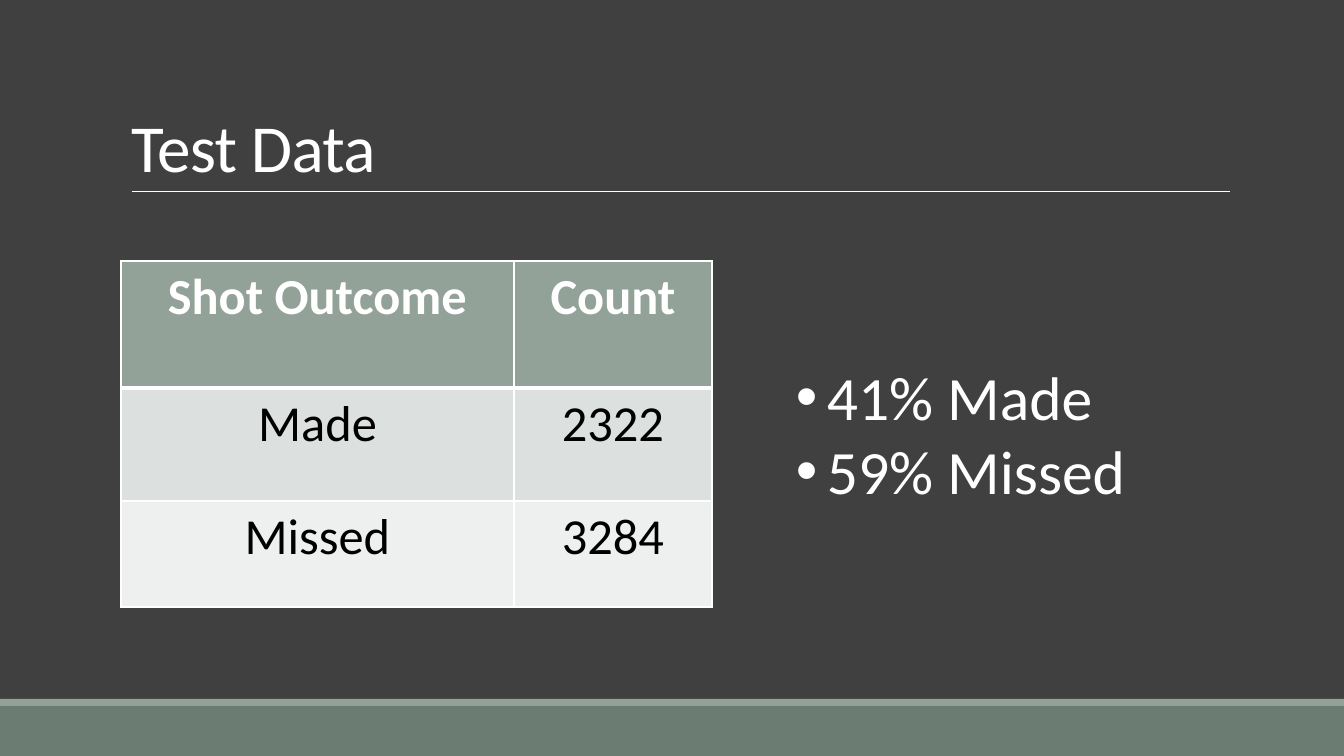
import pptx
import pptx.util
import pptx.dml.color
import pptx.enum.shapes
import pptx.enum.text
import pptx.oxml
import pptx.oxml.ns

SCALE = 914400 / 100.8
WIDTH, HEIGHT = 1344, 756
FONT = "Calibri"
COLORS = {
    "back": "404040",
    "band": "6B7D72",
    "sage": "93A299",
    "white": "FFFFFF",
    "black": "000000",
    "odd": "DCE0DE",
    "even": "EEF0EF",
}
ROWS = [("Shot Outcome", "Count"), ("Made", "2322"), ("Missed", "3284")]
SHARES = ["41% Made", "59% Missed"]


def px(num):
    return pptx.util.Emu(round(num * SCALE))


def color(name):
    return pptx.dml.color.RGBColor.from_string(COLORS[name])


def paint(fill, name):
    fill.solid()
    fill.fore_color.rgb = color(name)


def style(para, size, name, bold=False):
    for run in para.runs:
        run.font.name = FONT
        run.font.size = pptx.util.Pt(size)
        run.font.bold = bold
        run.font.color.rgb = color(name)


def node(tag, inner="", **attrs):
    pairs = " ".join(f'{key}="{val}"' for key, val in attrs.items())
    space = pptx.oxml.ns.nsdecls("a")
    return pptx.oxml.parse_xml(f"<a:{tag} {space} {pairs}>{inner}</a:{tag}>")


def add_foot(slide, left, top, width, height):
    rim = 7
    for y, tall, name in [(top + rim, height - rim, "band"), (top, rim, "sage")]:
        bar = slide.shapes.add_shape(
            pptx.enum.shapes.MSO_SHAPE.RECTANGLE,
            px(left), px(y), px(width), px(tall))
        bar.shadow.inherit = False
        paint(bar.fill, name)
        bar.line.fill.background()


def add_title(slide, left, top, width, height):
    base = px(top + height)
    rule = slide.shapes.add_connector(
        pptx.enum.shapes.MSO_CONNECTOR.STRAIGHT,
        px(left + 11), base, px(left + width), base)
    rule.line.width = pptx.util.Pt(0.5)
    rule.line.color.rgb = color("white")
    rule._element.spPr.append(node("effectLst"))

    title = slide.shapes.title
    title.left, title.top = px(left), px(top)
    title.width, title.height = px(width), px(height)
    frame = title.text_frame
    frame.text = "Test Data"
    frame.word_wrap = True
    frame.vertical_anchor = pptx.enum.text.MSO_ANCHOR.BOTTOM
    para = frame.paragraphs[0]
    para.alignment = pptx.enum.text.PP_ALIGN.LEFT
    para.line_spacing = 0.85
    style(para, 48, "white")
    para.runs[0]._r.get_or_add_rPr().set("spc", "-50")


def add_edges(cell, top, low):
    props = cell._tc.get_or_add_tcPr()
    fill = f'<a:solidFill><a:srgbClr val="{COLORS["white"]}"/></a:solidFill>'
    edges = [("lnL", 1), ("lnR", 1), ("lnT", top), ("lnB", low)]
    for spot, (tag, size) in enumerate(edges):
        props.insert(spot, node(tag, fill, w=pptx.util.Pt(size)))


def add_counts(slide, left, top, width, height):
    wide = 393
    tall = [127, 113]
    tall.append(height - sum(tall))
    table = slide.shapes.add_table(
        len(ROWS), 2, px(left), px(top), px(width), px(height)).table
    for col, size in zip(table.columns, [wide, width - wide]):
        col.width = px(size)
    fills = ["sage", "odd", "even"]
    for r, (texts, size, fill) in enumerate(zip(ROWS, tall, fills)):
        table.rows[r].height = px(size)
        head = r == 0
        for c, text in enumerate(texts):
            cell = table.cell(r, c)
            cell.text_frame.text = text
            para = cell.text_frame.paragraphs[0]
            para.alignment = pptx.enum.text.PP_ALIGN.CENTER
            style(para, 36, "white" if head else "black", head)
            paint(cell.fill, fill)
            add_edges(cell, 3 if r == 1 else 1, 3 if head else 1)


def add_shares(slide, left, top, width, height):
    box = slide.shapes.add_textbox(px(left), px(top), px(width), px(height))
    frame = box.text_frame
    frame.word_wrap = True
    frame.auto_size = pptx.enum.text.MSO_AUTO_SIZE.SHAPE_TO_FIT_TEXT
    frame.text = "\n".join(SHARES)
    indent = px(31)
    for para in frame.paragraphs:
        style(para, 44, "white")
        props = para._p.get_or_add_pPr()
        props.set("marL", str(indent))
        props.set("indent", str(-indent))
        props.append(node("buFont", typeface="Arial"))
        props.append(node("buChar", char="•"))


def main():
    deck = pptx.Presentation()
    deck.slide_width, deck.slide_height = px(WIDTH), px(HEIGHT)
    slide = deck.slides.add_slide(deck.slide_layouts[5])
    paint(slide.background.fill, "back")
    add_foot(slide, 0, 699, WIDTH, 57)
    add_title(slide, 121, 31, 1109, 160)
    add_counts(slide, 121, 261, 591, 346)
    add_shares(slide, 786, 354, 428, 159)
    deck.save("out.pptx")


if __name__ == "__main__":
    main()
